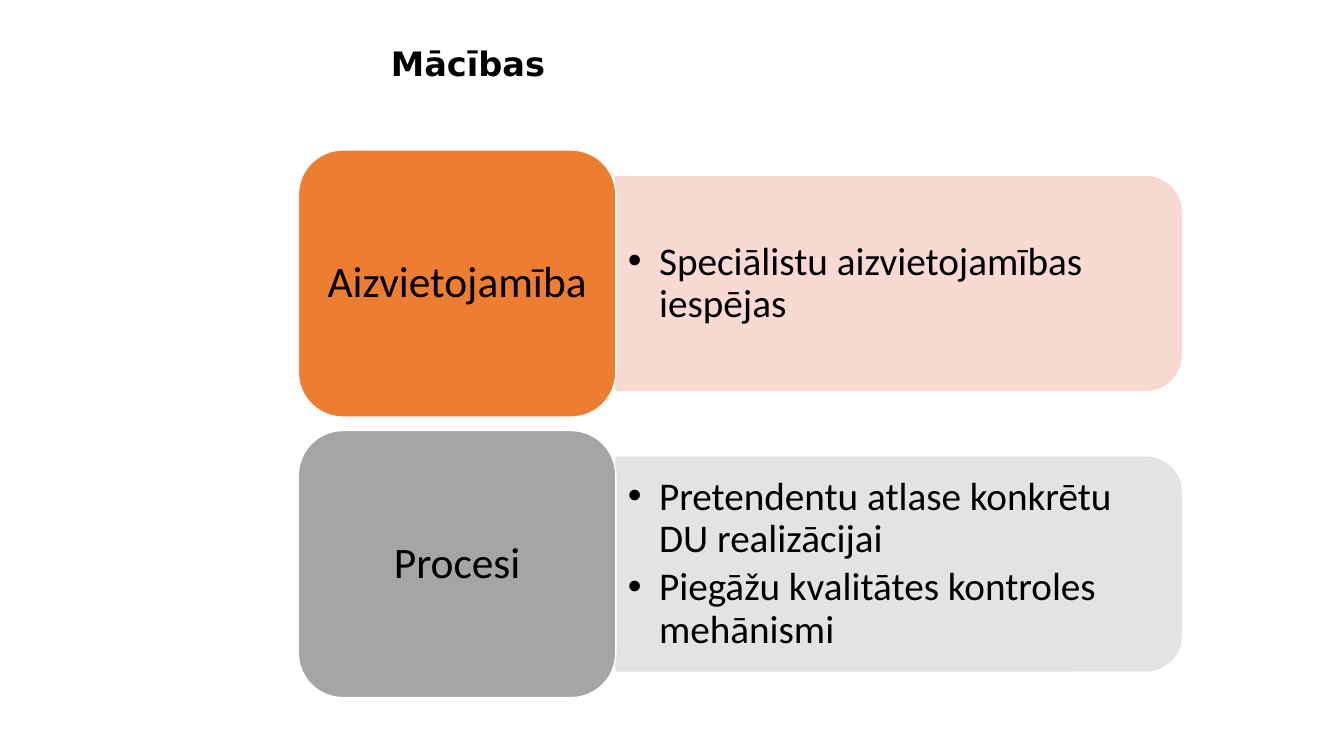
from dataclasses import dataclass

from lxml import etree
from pptx import Presentation
from pptx import util as u
from pptx.dml.color import RGBColor
from pptx.enum import shapes, text
from pptx.oxml import ns


@dataclass(frozen=True)
class Theme:
    """Colours, fonts and type sizes of the slide."""
    ink: str = "000000"
    outline: str = "FFFFFF"
    orange: str = "ED7D31"
    orange_tint: str = "F8D7CE"
    grey: str = "A5A5A5"
    grey_tint: str = "E1E1E1"
    title_font: str = "DejaVu Sans"
    body_font: str = "Calibri"
    title_size: int = 24
    label_size: int = 31
    bullet_size: int = 28
    pane_opacity: int = 90


THEME = Theme()
ROWS = [
    ("Aizvietojamība", THEME.orange, THEME.orange_tint,
     ["Speciālistu aizvietojamības iespējas"]),
    ("Procesi", THEME.grey, THEME.grey_tint,
     ["Pretendentu atlase konkrētu DU realizācijai",
      "Piegāžu kvalitātes kontroles mehānismi"]),
]


def place(part, left, top, width, height):
    """Move a part to a box given in centimetres."""
    part.left, part.top = u.Cm(left), u.Cm(top)
    part.width, part.height = u.Cm(width), u.Cm(height)


def set_frame(frame, anchor, side, edge):
    """Set wrapping, anchor and insets of a text frame."""
    frame.word_wrap = True
    frame.auto_size = text.MSO_AUTO_SIZE.NONE
    frame.vertical_anchor = anchor
    frame.margin_left = frame.margin_right = u.Cm(side)
    frame.margin_top = frame.margin_bottom = u.Cm(edge)


def write(paragraph, words, size, font, align, bold=False, after=0):
    """Write one run into a paragraph with its spacing."""
    paragraph.alignment = align
    paragraph.line_spacing = 0.9
    paragraph.space_before = u.Pt(0)
    paragraph.space_after = u.Pt(after)
    run = paragraph.add_run()
    run.text = words
    run.font.size, run.font.name, run.font.bold = u.Pt(size), font, bold
    run.font.color.rgb = RGBColor.from_string(THEME.ink)


def add_bullet(paragraph):
    """Give a paragraph a hanging bullet on the second level."""
    paragraph.level = 1
    properties = paragraph._p.get_or_add_pPr()
    properties.set("marL", str(u.Cm(0.79)))
    properties.set("indent", str(-u.Cm(0.79)))
    etree.SubElement(properties, ns.qn("a:buChar"), char="•")


def paint(shape, fill, line, opacity=100):
    """Fill and outline a shape, with optional transparency."""
    shape.shadow.inherit = False
    shape.fill.solid()
    shape.fill.fore_color.rgb = RGBColor.from_string(fill)
    shape.line.color.rgb = RGBColor.from_string(line)
    shape.line.width = u.Pt(1)
    if opacity < 100:
        for colour in shape._element.spPr.iter(ns.qn("a:srgbClr")):
            etree.SubElement(colour, ns.qn("a:alpha"), val=str(opacity * 1000))


def title_region(heading, left, top, width, height):
    """Place the slide title at the top left of its box."""
    place(heading, left, top, width, height)
    set_frame(heading.text_frame, text.MSO_ANCHOR.TOP, 0.25, 0.13)
    write(heading.text_frame.paragraphs[0], "Mācības", THEME.title_size,
          THEME.title_font, text.PP_ALIGN.LEFT, bold=True)


def label_region(slide, label, fill, left, top, width, height):
    """Draw the rounded block that names a row."""
    block = slide.shapes.add_shape(shapes.MSO_SHAPE.ROUNDED_RECTANGLE, 0, 0, 0, 0)
    place(block, left, top, width, height)
    paint(block, fill, THEME.outline)
    set_frame(block.text_frame, text.MSO_ANCHOR.MIDDLE, 0.32, 0.16)
    write(block.text_frame.paragraphs[0], label, THEME.label_size,
          THEME.body_font, text.PP_ALIGN.CENTER)


def points_region(slide, points, items, tint, left, top, width, height):
    """Draw the tinted pane and lay the bulleted points over it."""
    pane = slide.shapes.add_shape(
        shapes.MSO_SHAPE.ROUND_2_SAME_RECTANGLE, 0, 0, 0, 0)
    place(pane, left + (width - height) / 2, top + (height - width) / 2,
          height, width)
    pane.rotation = 90
    paint(pane, tint, tint, THEME.pane_opacity)
    points._element.addprevious(pane._element)

    corner = 0.27
    place(points, left, top + corner, width - corner, height - 2 * corner)
    frame = points.text_frame
    set_frame(frame, text.MSO_ANCHOR.MIDDLE, 0.3, 0.15)
    for number, item in enumerate(items):
        paragraph = frame.add_paragraph() if number else frame.paragraphs[0]
        add_bullet(paragraph)
        write(paragraph, item, THEME.bullet_size, THEME.body_font,
              text.PP_ALIGN.LEFT, after=0.15 * THEME.bullet_size)


def row_region(slide, points, row, left, top, width, height):
    """Place a label block and its points side by side."""
    label, fill, tint, items = row
    label_width, pane_inset = 8, 0.67
    points_region(slide, points, items, tint, left + label_width,
                  top + pane_inset, width - label_width, height - 2 * pane_inset)
    label_region(slide, label, fill, left, top, label_width, height)


def training_slide(deck):
    """Build the slide with its title and two rows."""
    slide = deck.slides.add_slide(deck.slide_layouts.get_by_name("Two Content"))
    heading, *bodies = list(slide.placeholders)[:1 + len(ROWS)]
    title_region(heading, 9.6, 1.07, 22.58, 2.87)
    height, gap = 6.73, 0.34
    for number, (points, row) in enumerate(zip(bodies, ROWS)):
        row_region(slide, points, row, 7.52, 3.78 + number * (height + gap),
                   22.25, height)


def main():
    """Create and save the presentation."""
    deck = Presentation()
    deck.slide_width, deck.slide_height = u.Cm(33.87), u.Cm(19.05)
    training_slide(deck)
    deck.save("out.pptx")


if __name__ == "__main__":
    main()
